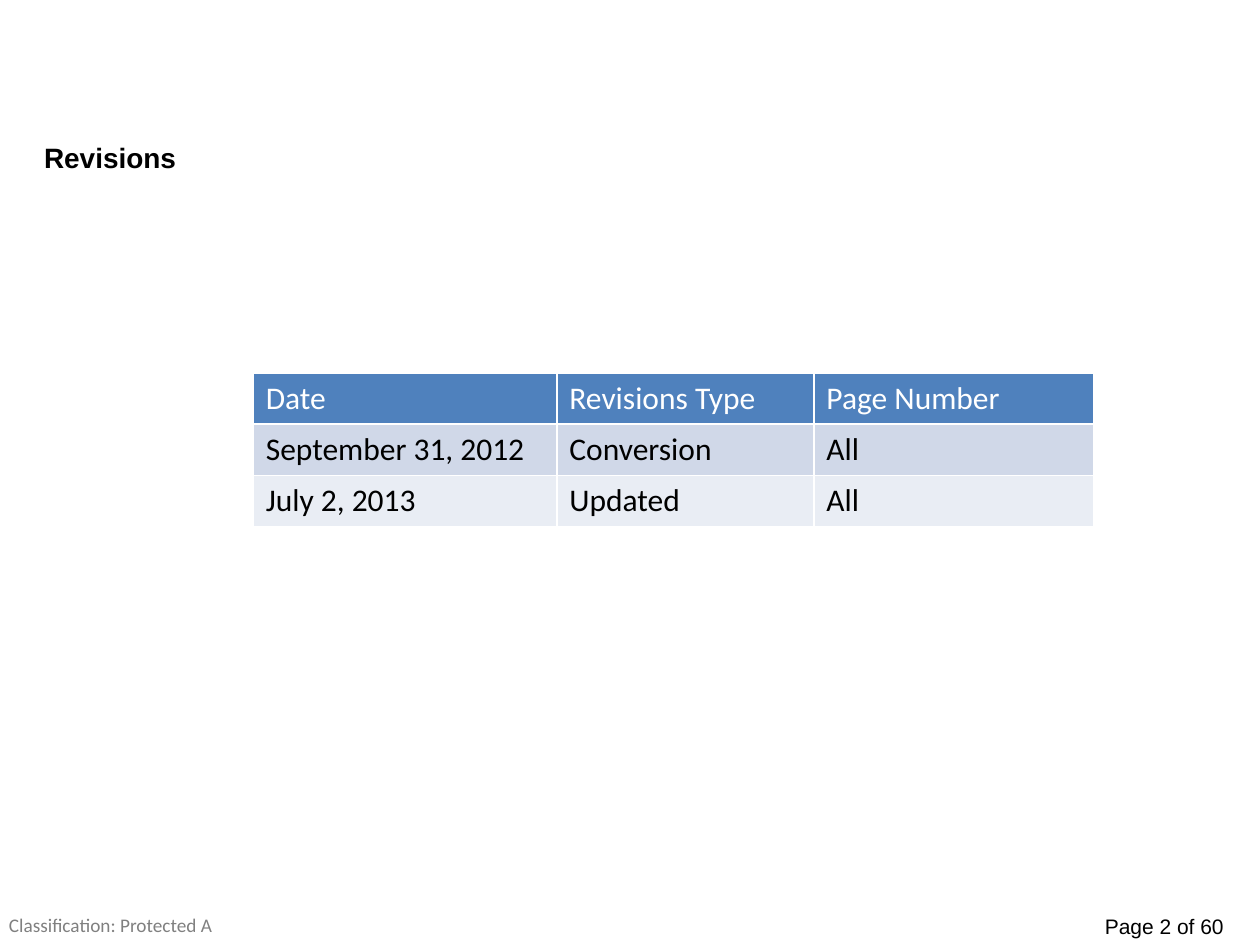
import pptx
import pptx.util
import pptx.dml.color
import pptx.enum.text
import pptx.oxml
from lxml import etree
from pptx.util import Inches

HUES = {
    "ink": "000000",
    "gray": "808080",
    "white": "FFFFFF",
    "head": "4F81BD",
    "odd": "D0D8E8",
    "even": "E9EDF4",
}
ROWS = [
    ["Date", "Revisions Type", "Page Number"],
    ["September 31, 2012", "Conversion", "All"],
    ["July 2, 2013", "Updated", "All"],
]
WIDTHS = [2.41, 2.04, 2.22]


def tint(name):
    return pptx.dml.color.RGBColor.from_string(HUES[name])


def write(frame, text, size=18, font="Calibri", hue="ink", bold=False):
    """Fill a text frame with one formatted, left-aligned paragraph."""
    frame.text = text
    para = frame.paragraphs[0]
    para.alignment = pptx.enum.text.PP_ALIGN.LEFT
    para.font.size = pptx.util.Pt(size)
    para.font.name = font
    para.font.bold = bold
    para.font.color.rgb = tint(hue)


def edge(cell, hue="white", width=1):
    """Draw the same line on all four sides of a cell."""
    props = cell._tc.get_or_add_tcPr()
    for side in ("lnL", "lnR", "lnT", "lnB"):
        line = etree.SubElement(props, pptx.oxml.ns.qn("a:" + side),
                                w=str(pptx.util.Pt(width)))
        fill = etree.SubElement(line, pptx.oxml.ns.qn("a:solidFill"))
        etree.SubElement(fill, pptx.oxml.ns.qn("a:srgbClr"), val=HUES[hue])


def add_title(slide, left, top, width, height):
    title = slide.shapes.title
    title.left, title.top = Inches(left), Inches(top)
    title.width, title.height = Inches(width), Inches(height)
    frame = title.text_frame
    frame.vertical_anchor = pptx.enum.text.MSO_ANCHOR.MIDDLE
    write(frame, "Revisions", size=16, font="Arial", bold=True)


def add_log(slide, left, top, width, height):
    """Place the table of revisions."""
    table = slide.shapes.add_table(
        len(ROWS), len(WIDTHS), Inches(left), Inches(top),
        Inches(width), Inches(height)).table
    for col, share in zip(table.columns, WIDTHS):
        col.width = Inches(width * share / sum(WIDTHS))
    for r, (row, fill) in enumerate(zip(ROWS, ("head", "odd", "even"))):
        for c, text in enumerate(row):
            cell = table.cell(r, c)
            edge(cell)
            cell.fill.solid()
            cell.fill.fore_color.rgb = tint(fill)
            write(cell.text_frame, text, hue="ink" if r else "white")


def add_note(slide, left, top, width, height, text, inset=None, **style):
    """Place one footer text."""
    frame = slide.shapes.add_textbox(
        Inches(left), Inches(top), Inches(width), Inches(height)).text_frame
    frame.word_wrap = True
    if inset is not None:
        frame.margin_left = frame.margin_right = Inches(inset)
        frame.margin_top = frame.margin_bottom = Inches(inset)
    write(frame, text, **style)


def main():
    deck = pptx.Presentation()
    deck.slide_width, deck.slide_height = Inches(10), Inches(7.5)
    slide = deck.slides.add_slide(deck.slide_layouts[5])

    # Heading and table
    add_title(slide, 0.25, 1, 2, 0.5)
    add_log(slide, 2.01, 2.96, 6.67, 1.22)

    # Footer
    add_note(slide, 8.67, 7.2, 1.33, 0.3, "Page 2 of 60",
             size=12, font="Arial")
    add_note(slide, 0.07, 7.25, 1.65, 0.18, "Classification: Protected A",
             inset=0, size=11, hue="gray")
    deck.save("out.pptx")


if __name__ == "__main__":
    main()
